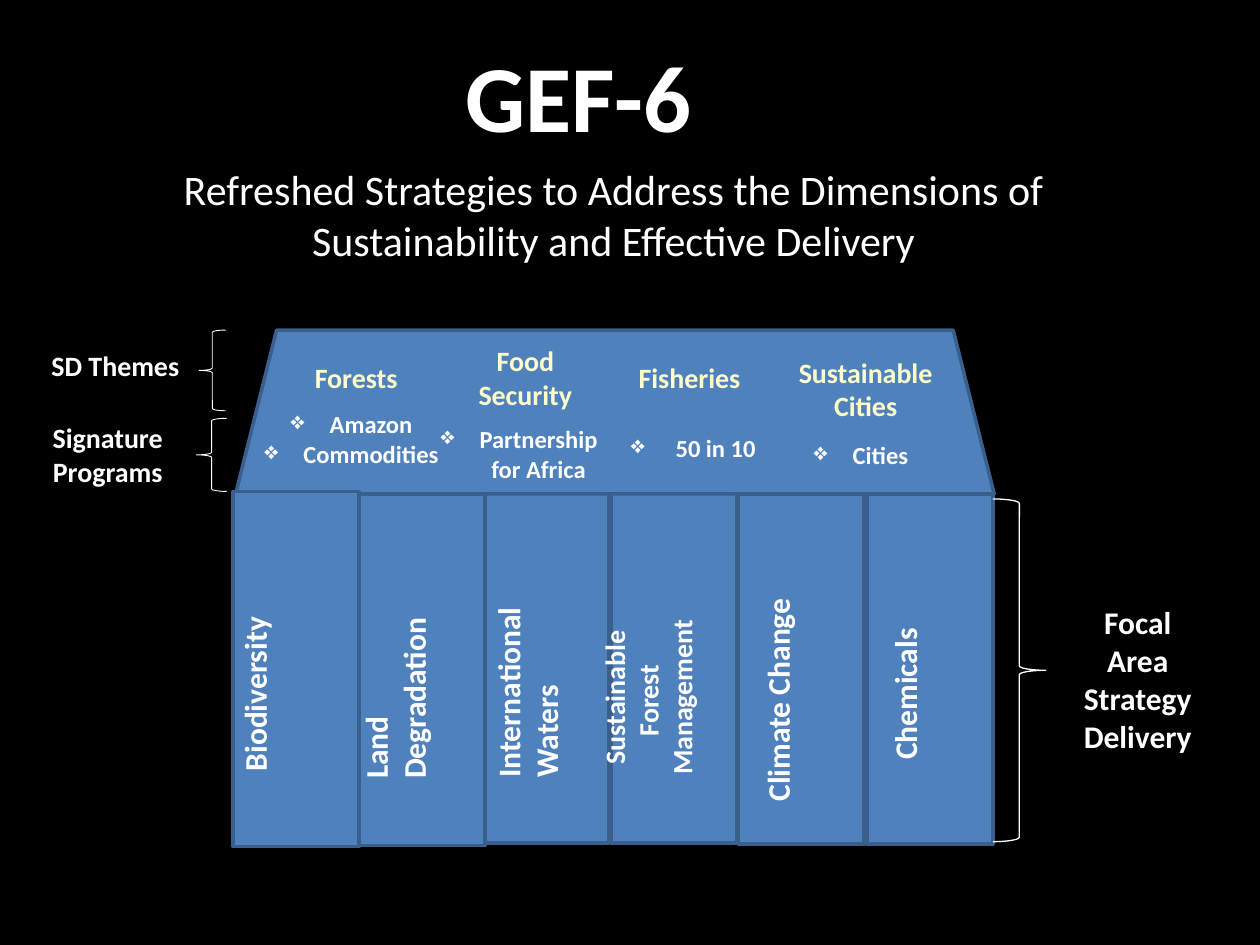
from lxml import etree
from pptx import Presentation
from pptx.dml.color import RGBColor
from pptx.enum.shapes import MSO_SHAPE
from pptx.enum.text import MSO_ANCHOR, MSO_AUTO_SIZE, PP_ALIGN
from pptx.oxml.ns import qn
from pptx.util import Inches, Pt

LEFT, CENTER = PP_ALIGN.LEFT, PP_ALIGN.CENTER
TOP = MSO_ANCHOR.TOP
NO_FIT, GROW = MSO_AUTO_SIZE.NONE, MSO_AUTO_SIZE.SHAPE_TO_FIT_TEXT
RECTANGLE, TRAPEZOID = MSO_SHAPE.RECTANGLE, MSO_SHAPE.TRAPEZOID
LEFT_BRACE, RIGHT_BRACE = MSO_SHAPE.LEFT_BRACE, MSO_SHAPE.RIGHT_BRACE
COLUMNS, ROWS = 100, 75


def color(value):
    return RGBColor.from_string(value)


class Diagram:
    font = "Calibri"
    ink, theme_ink = "FFFFFF", "FFFFCC"
    panel_fill, panel_line = "4F81BD", "3A5F8C"
    bullet, hanging = "❖", Inches(0.31)

    def __init__(self, deck):
        self.column = deck.slide_width / COLUMNS
        self.row = deck.slide_height / ROWS
        self.page = deck.slides.add_slide(deck.slide_layouts[0])
        background = self.page.background.fill
        background.solid()
        background.fore_color.rgb = color("000000")

    def area(self, left, top, width, height):
        return (round(left * self.column), round(top * self.row),
                round(width * self.column), round(height * self.row))

    def add_text(self, frame, paragraphs, size, ink, bold, align, bulleted=False):
        for index, lines in enumerate(paragraphs):
            para = frame.add_paragraph() if index else frame.paragraphs[0]
            para.alignment = align
            para.space_before = Pt(0)
            if bulleted:
                properties = para._p.get_or_add_pPr()
                properties.set("marL", str(self.hanging))
                properties.set("indent", str(-self.hanging))
                etree.SubElement(properties, qn("a:buChar")).set("char", self.bullet)
            for number, line in enumerate(lines.split("\n")):
                if number:
                    para.add_line_break()
                span = para.add_run()
                span.text = line
                span.font.name = self.font
                span.font.size = Pt(size)
                span.font.bold = bold
                span.font.color.rgb = color(ink)

    def heading(self, index, place, text, size, bold, wrap):
        box = self.page.placeholders[index]
        box.left, box.top, box.width, box.height = self.area(*place)
        frame = box.text_frame
        frame.auto_size = NO_FIT
        frame.word_wrap = wrap
        frame.vertical_anchor = TOP
        self.add_text(frame, [text], size, self.ink, bold, CENTER)

    def label(self, place, paragraphs, size, ink=ink, align=CENTER,
              upright=False, bulleted=False):
        frame = self.page.shapes.add_textbox(*self.area(*place)).text_frame
        frame.word_wrap = False
        frame.auto_size = GROW
        if upright:
            frame._txBody.bodyPr.set("vert", "vert270")
        self.add_text(frame, paragraphs, size, ink, True, align, bulleted)

    def shape(self, kind, place, line, width):
        shape = self.page.shapes.add_shape(kind, *self.area(*place))
        shape.shadow.inherit = False
        shape.line.color.rgb = color(line)
        shape.line.width = Pt(width)
        return shape

    def panel(self, kind, place):
        fill = self.shape(kind, place, self.panel_line, 2).fill
        fill.solid()
        fill.fore_color.rgb = color(self.panel_fill)

    def brace(self, kind, place, width):
        self.shape(kind, place, self.ink, width).fill.background()


def main():
    deck = Presentation()
    deck.slide_width, deck.slide_height = Inches(10), Inches(7.5)
    diagram = Diagram(deck)
    diagram.heading(0, (35.8, 2.5, 20.2, 10.1), "GEF-6", 54, True, False)
    diagram.heading(1, (8.3, 12.5, 80.8, 9.1),
                    "Refreshed Strategies to Address the Dimensions of "
                    "Sustainability and Effective Delivery", 24, False, True)

    pillars = [(68.8, 39.2, 27.8), (58.6, 39.2, 27.8), (48.5, 39, 27.9),
               (38.3, 39, 27.9), (28.5, 39.2, 27.9), (18.5, 39, 28.2)]
    for left, top, height in pillars[:4]:
        diagram.panel(RECTANGLE, (left, top, 10, height))
    diagram.panel(TRAPEZOID, (18.7, 26.2, 60.2, 13))
    for left, top, height in pillars[4:]:
        diagram.panel(RECTANGLE, (left, top, 10, height))

    focal_areas = [
        ((18.2, 48.9, 5, 13.3), "Biodiversity", 18, LEFT),
        ((27.8, 48.9, 8.1, 13.9), "Land \nDegradation", 18, LEFT),
        ((38.3, 47.5, 8.1, 15.2), "International \nWaters", 18, LEFT),
        ((46.9, 48.6, 10.1, 13.5), "Sustainable\nForest \nManagement", 16, CENTER),
        ((59.7, 47.4, 5, 17.2), "Climate Change", 18, LEFT),
        ((69.8, 49.8, 5, 11.5), "Chemicals", 18, LEFT),
    ]
    for place, text, size, align in focal_areas:
        diagram.label(place, [text], size, align=align, upright=True)

    themes = [
        ((24, 28.1, 8.7, 3.7), "Forests", LEFT),
        ((36.9, 26.8, 9.6, 6.4), "Food\nSecurity", CENTER),
        ((49.7, 28.1, 10.2, 3.7), "Fisheries", LEFT),
        ((62.3, 27.7, 12.8, 6.4), "Sustainable\nCities", CENTER),
    ]
    for place, text, align in themes:
        diagram.label(place, [text], 16, diagram.theme_ink, align)

    programs = [
        ((19.9, 32, 16, 5.7), ["Amazon", "Commodities"], CENTER),
        ((33.9, 33.2, 14.6, 5.7), ["Partnership\nfor Africa"], CENTER),
        ((49.1, 33.9, 12, 3.4), [" 50 in 10"], LEFT),
        ((63.6, 34.4, 9.6, 3.4), ["Cities"], LEFT),
    ]
    for place, paragraphs, align in programs:
        diagram.label(place, paragraphs, 14, align=align, bulleted=True)

    levels = [
        ((3.1, 27.2, 12.3, 3.7), "SD Themes", 16, LEFT),
        ((3.1, 32.9, 10.9, 6.4), "Signature\nPrograms", 16, CENTER),
        ((85, 47.4, 10.6, 13.1), "Focal\nArea\nStrategy\nDelivery", 18, CENTER),
    ]
    for place, text, size, align in levels:
        diagram.label(place, [text], size, align=align)

    diagram.brace(LEFT_BRACE, (15.8, 26.2, 2.1, 6.4), 0.5)
    diagram.brace(LEFT_BRACE, (15.6, 33.2, 2.4, 5.8), 0.5)
    diagram.brace(RIGHT_BRACE, (78.8, 39.6, 4.2, 27.2), 0.75)
    deck.save("out.pptx")


if __name__ == "__main__":
    main()
